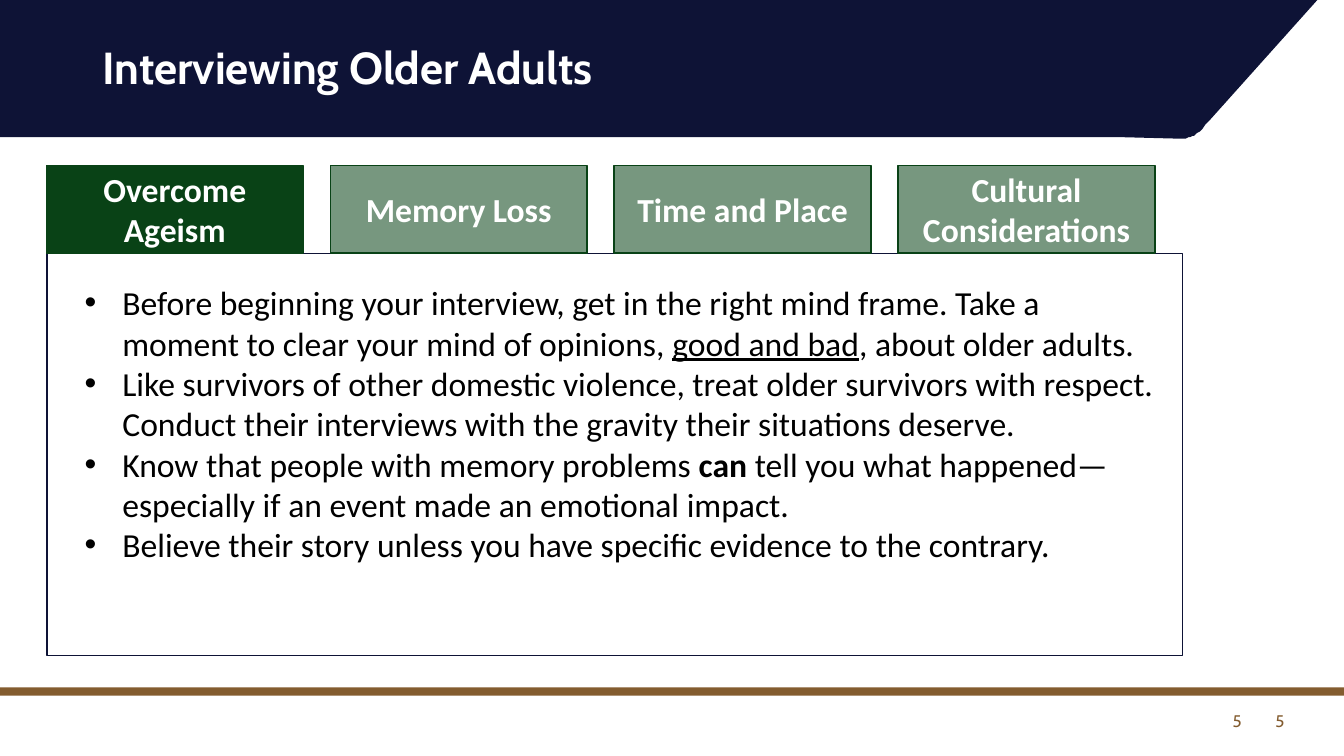
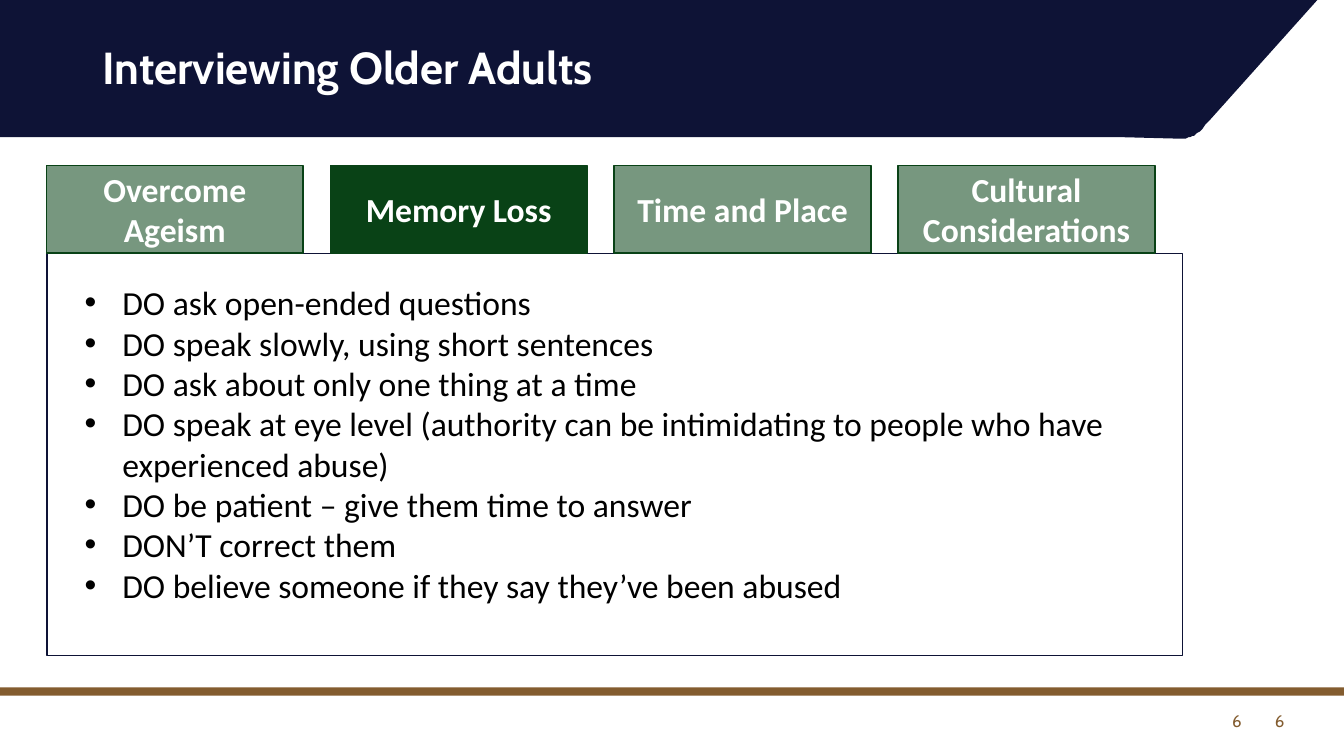
from lxml.etree import SubElement
from pptx import Presentation
from pptx.dml.color import RGBColor
from pptx.enum.shapes import MSO_SHAPE
from pptx.enum.text import MSO_ANCHOR, PP_ALIGN
from pptx.oxml.ns import qn
from pptx.util import Pt

NAVY = RGBColor(0x0E, 0x13, 0x36)
BROWN = RGBColor(0x83, 0x5C, 0x2F)
GREEN = RGBColor(0x09, 0x42, 0x16)
WHITE = RGBColor(0xFF, 0xFF, 0xFF)
BLACK = RGBColor(0x00, 0x00, 0x00)

TITLE_FONT = {"name": "Cabin", "size": Pt(32), "bold": True}
NUMBER_FONT = {"name": "Cabin", "size": Pt(12)}
TAB_FONT = {"name": "Calibri", "size": Pt(24), "bold": True}
BODY_FONT = {"name": "Calibri", "size": Pt(24)}

TITLE = "Interviewing Older Adults"
TABS = ["Overcome Ageism", "Memory Loss", "Time and Place", "Cultural Considerations"]
TAB_LEFT, TAB_PITCH = 33.1, 202.8
INACTIVE_OPACITY = 55
HANGING = Pt(27)

SLIDES = [
    {
        "number": "5",
        "active": "Overcome Ageism",
        "bullets": [
            [
                ("Before beginning your interview, get in the right mind frame. "
                 "Take a moment to clear your mind of opinions, ", {}),
                ("good and bad", {"underline": True}),
                (", about older adults.", {}),
            ],
            [("Like survivors of other domestic violence, treat older survivors with respect. "
              "Conduct their interviews with the gravity their situations deserve.", {})],
            [
                ("Know that people with memory problems ", {}),
                ("can", {"bold": True}),
                (" tell you what happened—especially if an event made an emotional impact.", {}),
            ],
            [("Believe their story unless you have specific evidence to the contrary.", {})],
        ],
    },
    {
        "number": "6",
        "active": "Memory Loss",
        "bullets": [[(text, {})] for text in (
            "DO ask open-ended questions",
            "DO speak slowly, using short sentences",
            "DO ask about only one thing at a time",
            "DO speak at eye level (authority can be intimidating to people who have "
            "experienced abuse)",
            "DO be patient – give them time to answer",
            "DON’T correct them",
            "DO believe someone if they say they’ve been abused",
        )],
    },
]


def add_run(p, text, color, formats):
    r = p.add_run()
    r.text = text
    r.font.color.rgb = color
    for name, value in formats.items():
        setattr(r.font, name, value)


def paint(sp, fill, line=None, opacity=100):
    sp.shadow.inherit = False
    sp.fill.solid()
    sp.fill.fore_color.rgb = fill
    if opacity < 100:
        color = sp.fill._xPr.find(qn("a:solidFill"))[0]
        SubElement(color, qn("a:alpha"), val=str(opacity * 1000))
    if line is None:
        sp.line.fill.background()
    else:
        sp.line.color.rgb = line
        sp.line.width = Pt(1)


def add_box(s, left, top, width, height, fill, line=None, opacity=100):
    sp = s.shapes.add_shape(MSO_SHAPE.RECTANGLE, Pt(left), Pt(top), Pt(width), Pt(height))
    paint(sp, fill, line, opacity)
    return sp


def add_text(s, left, top, width, height, anchor=MSO_ANCHOR.TOP):
    tf = s.shapes.add_textbox(Pt(left), Pt(top), Pt(width), Pt(height)).text_frame
    tf.word_wrap = True
    tf.vertical_anchor = anchor
    return tf


def bezier(start, control1, control2, end, steps=12):
    for i in range(1, steps + 1):
        t = i / steps
        weights = ((1 - t) ** 3, 3 * t * (1 - t) ** 2, 3 * t * t * (1 - t), t ** 3)
        yield tuple(sum(w * point[axis] for w, point in zip(weights, (start, control1, control2, end)))
                    for axis in (0, 1))


def add_header_band(s):
    corner = bezier((864, 86.4), (852, 99.4), (851, 98.6), (841, 98.6))
    outline = [(941, 0), (864, 86.4), *corner, (802, 98), (0, 98)]
    builder = s.shapes.build_freeform(0, 0, scale=Pt(1))
    builder.add_line_segments(outline, close=True)
    paint(builder.convert_to_shape(), NAVY)


def add_title(s, text):
    p = add_text(s, 66, 28.8, 828, 60).paragraphs[0]
    p.line_spacing = 0.9
    add_run(p, text, WHITE, TITLE_FONT)


def add_numbers(s, number):
    for left in (678, 708.5):
        p = add_text(s, left, 500.5, 216, 28.8, MSO_ANCHOR.MIDDLE).paragraphs[0]
        p.alignment = PP_ALIGN.RIGHT
        add_run(p, number, BROWN, NUMBER_FONT)


def add_bullets(s, bullets):
    tf = add_text(s, 53.3, 198, 779, 270)
    for i, segments in enumerate(bullets):
        p = tf.paragraphs[0] if i == 0 else tf.add_paragraph()
        pPr = p._p.get_or_add_pPr()
        pPr.set("marL", str(HANGING))
        pPr.set("indent", str(-HANGING))
        SubElement(pPr, qn("a:buFont"), typeface="Arial")
        SubElement(pPr, qn("a:buChar"), char="•")
        for text, formats in segments:
            add_run(p, text, BLACK, BODY_FONT | formats)


def add_tabs(s, active):
    for i, label in enumerate(TABS):
        opacity = 100 if label == active else INACTIVE_OPACITY
        sp = add_box(s, TAB_LEFT + i * TAB_PITCH, 118, 183.5, 62.8, GREEN, GREEN, opacity)
        tf = sp.text_frame
        tf.word_wrap = True
        tf.vertical_anchor = MSO_ANCHOR.MIDDLE
        p = tf.paragraphs[0]
        p.alignment = PP_ALIGN.CENTER
        add_run(p, label, WHITE, TAB_FONT)


def add_slide(prs, number, active, bullets):
    s = prs.slides.add_slide(prs.slide_layouts[6])
    add_header_band(s)
    add_box(s, 0, 491, 960, 6, BROWN)
    add_title(s, TITLE)
    add_numbers(s, number)
    add_box(s, 33.6, 181, 811, 287.3, WHITE, NAVY)
    add_bullets(s, bullets)
    add_tabs(s, active)


def main():
    prs = Presentation()
    prs.slide_width, prs.slide_height = Pt(960), Pt(540)
    for content in SLIDES:
        add_slide(prs, **content)
    prs.save("out.pptx")


if __name__ == "__main__":
    main()
